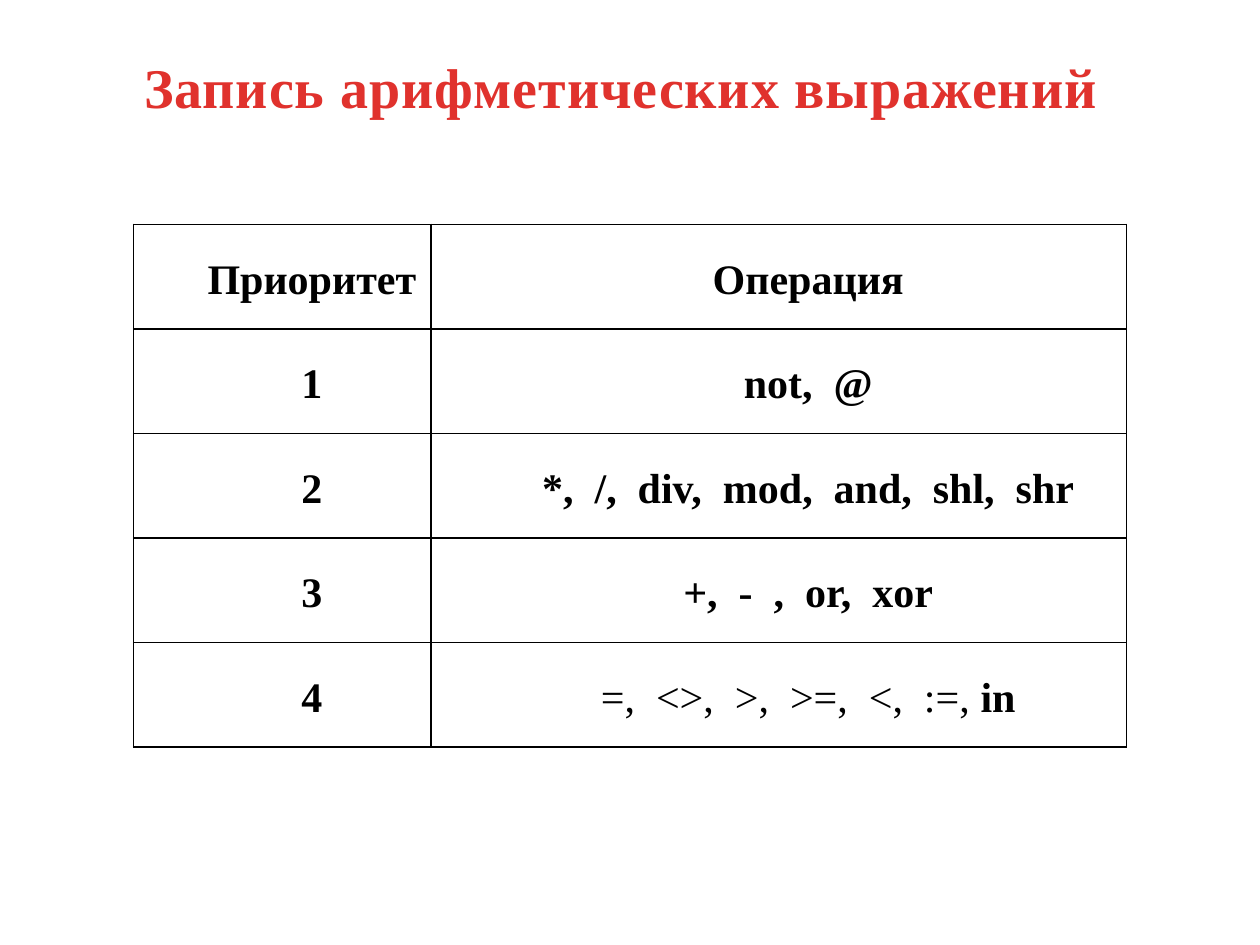
from lxml.etree import SubElement
from pptx import Presentation
from pptx.dml.color import RGBColor
from pptx.enum.text import MSO_ANCHOR, PP_ALIGN
from pptx.oxml.ns import qn
from pptx.util import Inches, Pt

RED = RGBColor(0xE0, 0x32, 0x2D)
BLACK = RGBColor(0, 0, 0)
FONT = "Times New Roman"


def write(paragraph, text, size=24, color=BLACK, bold=True, indent=0, line_spacing=1.0, tracking=0):
    paragraph.alignment = PP_ALIGN.CENTER
    paragraph.line_spacing = line_spacing
    properties = paragraph._p.get_or_add_pPr()
    properties.set("marL", "0")
    properties.set("indent", str(Inches(indent)))
    run = paragraph.add_run()
    run.text = text
    run.font.name = FONT
    run.font.size = Pt(size)
    run.font.bold = bold
    run.font.color.rgb = color
    if tracking:
        run.font._element.set("spc", str(int(tracking * 100)))


def add_borders(cell, color, width):
    properties = cell._tc.get_or_add_tcPr()
    for side in ("lnL", "lnR", "lnT", "lnB"):
        line = SubElement(properties, qn(f"a:{side}"), w=str(Pt(width)))
        fill = SubElement(line, qn("a:solidFill"))
        SubElement(fill, qn("a:srgbClr"), val=str(color))


presentation = Presentation()
presentation.slide_width = Inches(10)
presentation.slide_height = Inches(7.5)
slide = presentation.slides.add_slide(presentation.slide_layouts[6])

title = slide.shapes.add_textbox(Inches(0.43), Inches(0.21), Inches(9), Inches(0.94))
title.text_frame.word_wrap = True
title.text_frame.vertical_anchor = MSO_ANCHOR.MIDDLE
write(title.text_frame.paragraphs[0], "Запись арифметических выражений", size=32, color=RED, tracking=0.5)

rows = [
    ("Приоритет", [("Операция", True)]),
    ("1", [("not,  @", True)]),
    ("2", [("*,  /,  div,  mod,  and,  shl,  shr", True)]),
    ("3", [("+,  -  ,  or,  xor", True)]),
    ("4", [("=,  <>,  >,  >=,  <,  :=, ", False), ("in", True)]),
]
column_widths = [2.36, 5.52]
row_height = 0.83

table = slide.shapes.add_table(
    len(rows), len(column_widths), Inches(1.06), Inches(1.78),
    Inches(sum(column_widths)), Inches(row_height * len(rows)),
).table
table.first_row = False
table.horz_banding = False
for column, width in zip(table.columns, column_widths):
    column.width = Inches(width)

for row, (priority, operations) in zip(table.rows, rows):
    row.height = Inches(row_height)
    for cell, runs in zip(row.cells, ([(priority, True)], operations)):
        cell.margin_left = cell.margin_right = Inches(0.01)
        cell.margin_top = cell.margin_bottom = Inches(0.01)
        cell.vertical_anchor = MSO_ANCHOR.MIDDLE
        add_borders(cell, BLACK, 1)
        cell.fill.background()
        for text, bold in runs:
            write(cell.text_frame.paragraphs[0], text, bold=bold, indent=0.47, line_spacing=1.15)

presentation.save("out.pptx")
